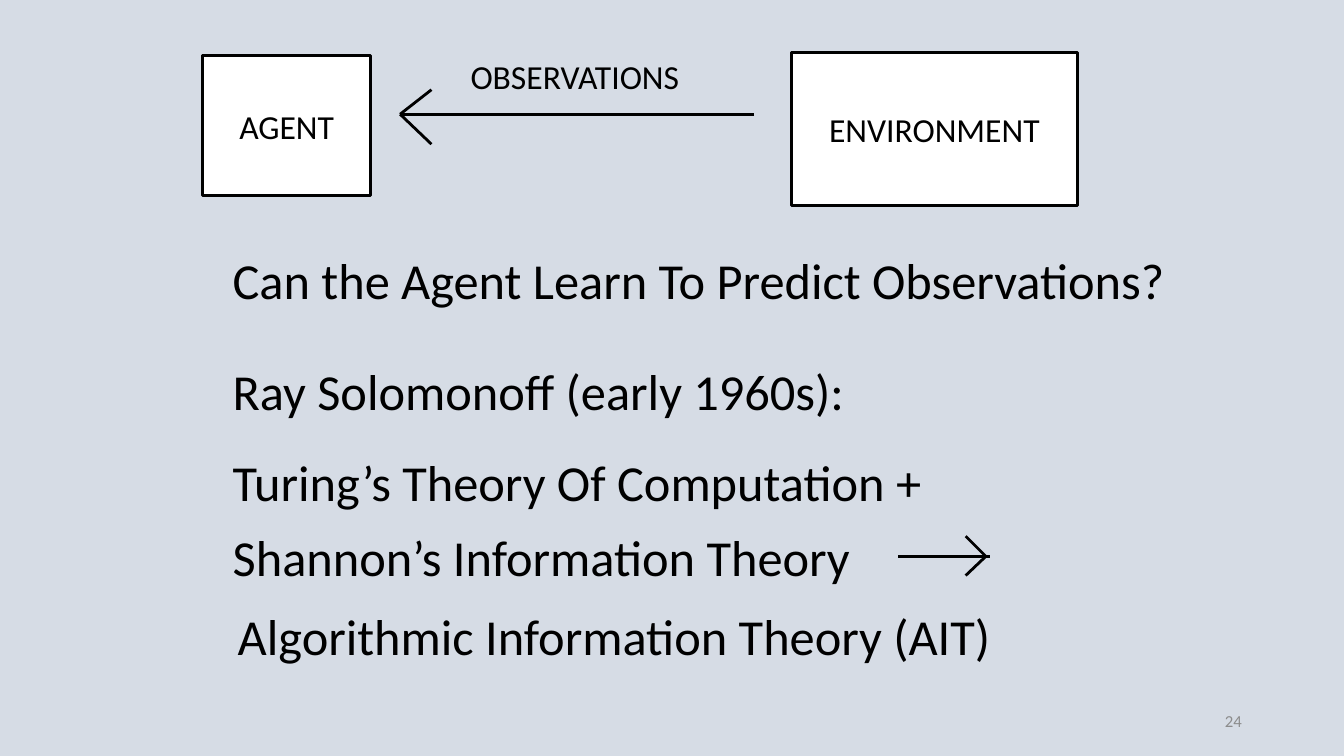
from lxml import etree
from pptx import Presentation
from pptx.dml.color import RGBColor
from pptx.enum.shapes import MSO_CONNECTOR as CONNECTOR, MSO_SHAPE as SHAPE
from pptx.enum.text import MSO_ANCHOR as ANCHOR, MSO_AUTO_SIZE as AUTO_SIZE, PP_ALIGN as ALIGN
from pptx.oxml.ns import qn
from pptx.util import Pt

BACKGROUND = RGBColor(0xD6, 0xDC, 0xE5)
BLACK = RGBColor(0, 0, 0)
WHITE = RGBColor(0xFF, 0xFF, 0xFF)
GRAY = RGBColor(0x8C, 0x8C, 0x8C)


def write(shape, text, size, color=BLACK, align=ALIGN.LEFT, **frame_format):
    frame = shape.text_frame
    for name, value in frame_format.items():
        setattr(frame, name, value)
    paragraph = frame.paragraphs[0]
    paragraph.alignment = align
    run = paragraph.add_run()
    run.text = text
    for name, value in {"name": "Calibri", "size": Pt(size)}.items():
        setattr(run.font, name, value)
    run.font.color.rgb = color


def draw_line(*ends):
    line = slide.shapes.add_connector(CONNECTOR.STRAIGHT, *map(Pt, ends))
    line.line.color.rgb = BLACK
    line.line.width = Pt(2)
    etree.SubElement(line._element.spPr, qn("a:effectLst"))


presentation = Presentation()
presentation.slide_width = Pt(960)
presentation.slide_height = Pt(540)
slide = presentation.slides.add_slide(presentation.slide_layouts[6])
slide.background.fill.solid()
slide.background.fill.fore_color.rgb = BACKGROUND

# Agent and environment boxes
for label, *place in [
    ("AGENT", 144.7, 39.8, 120.2, 100.1),
    ("ENVIRONMENT", 565.2, 37.6, 204.5, 109),
]:
    box = slide.shapes.add_shape(SHAPE.RECTANGLE, *map(Pt, place))
    box.shadow.inherit = False
    box.fill.solid()
    box.fill.fore_color.rgb = WHITE
    box.line.color.rgb = BLACK
    box.line.width = Pt(2)
    write(box, label, 24, align=ALIGN.CENTER, vertical_anchor=ANCHOR.MIDDLE, word_wrap=True)

# Arrows: tail, shaft end, tip, height, then where the barbs end
for tail, shaft_end, tip, y, barb_x, barb_ys in [
    (538.6, 285.8, 285.8, 81.6, 308.2, (64.1, 103)),
    (641.5, 707, 704.2, 397.4, 689.8, (383, 411.1)),
]:
    draw_line(tail, y, shaft_end, y)
    for barb_y in barb_ys:
        draw_line(tip, y, barb_x, barb_y)

# Arrow label
label_box = slide.shapes.add_textbox(Pt(329), Pt(36.7), Pt(166.3), Pt(36))
write(label_box, "OBSERVATIONS", 24, word_wrap=True, auto_size=AUTO_SIZE.SHAPE_TO_FIT_TEXT)

# Statements
for text, left, top, width in [
    ("Can the Agent Learn To Predict Observations?", 159.1, 174.7, 684),
    ("Ray Solomonoff (early 1960s):", 159.1, 253.4, 457),
    ("Turing’s Theory Of Computation +", 159.1, 319, 510),
    ("Shannon’s Information Theory", 159.1, 372.2, 461),
    ("Algorithmic Information Theory (AIT)", 162.7, 428.8, 558),
]:
    statement = slide.shapes.add_textbox(Pt(left), Pt(top), Pt(width), Pt(51))
    write(statement, text, 36, word_wrap=False, auto_size=AUTO_SIZE.SHAPE_TO_FIT_TEXT)

# Slide number
number = slide.shapes.add_textbox(Pt(678.2), Pt(500.4), Pt(216), Pt(28.8))
write(number, "24", 12, GRAY, ALIGN.RIGHT, vertical_anchor=ANCHOR.MIDDLE, word_wrap=True)

presentation.save("out.pptx")
